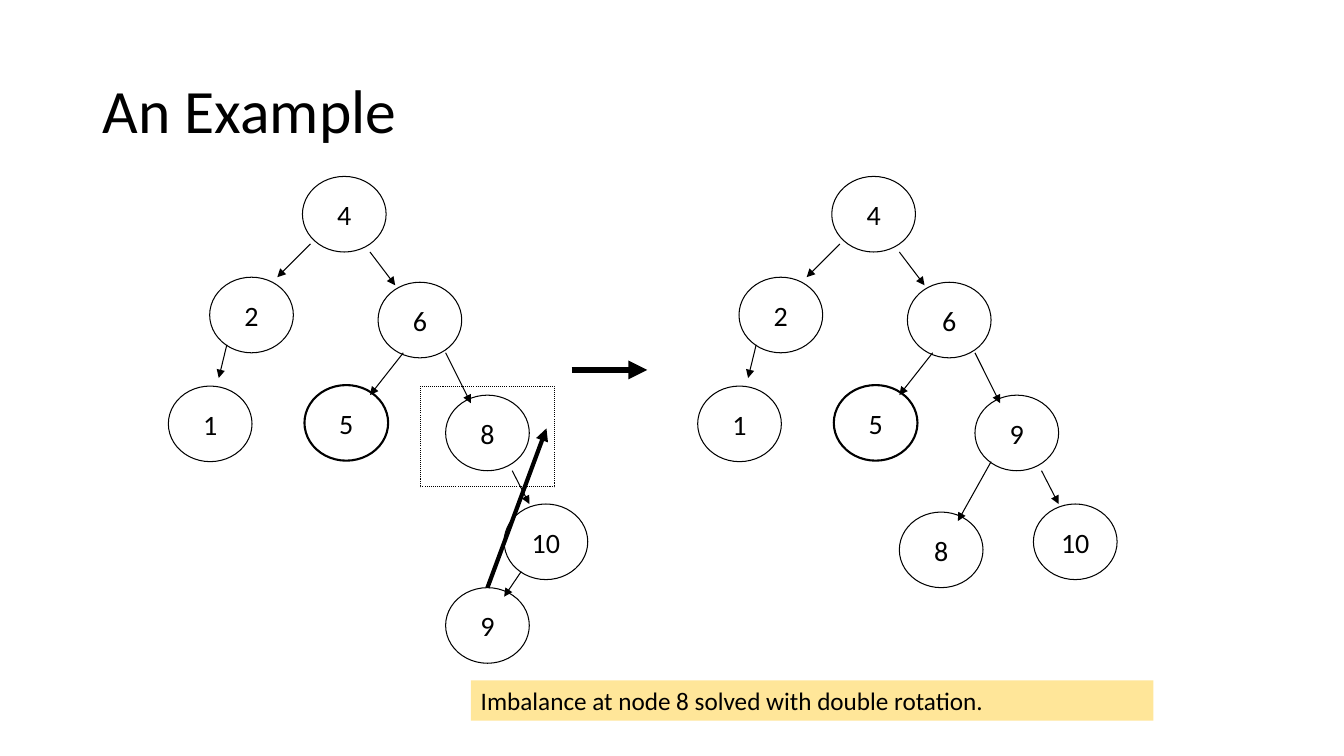
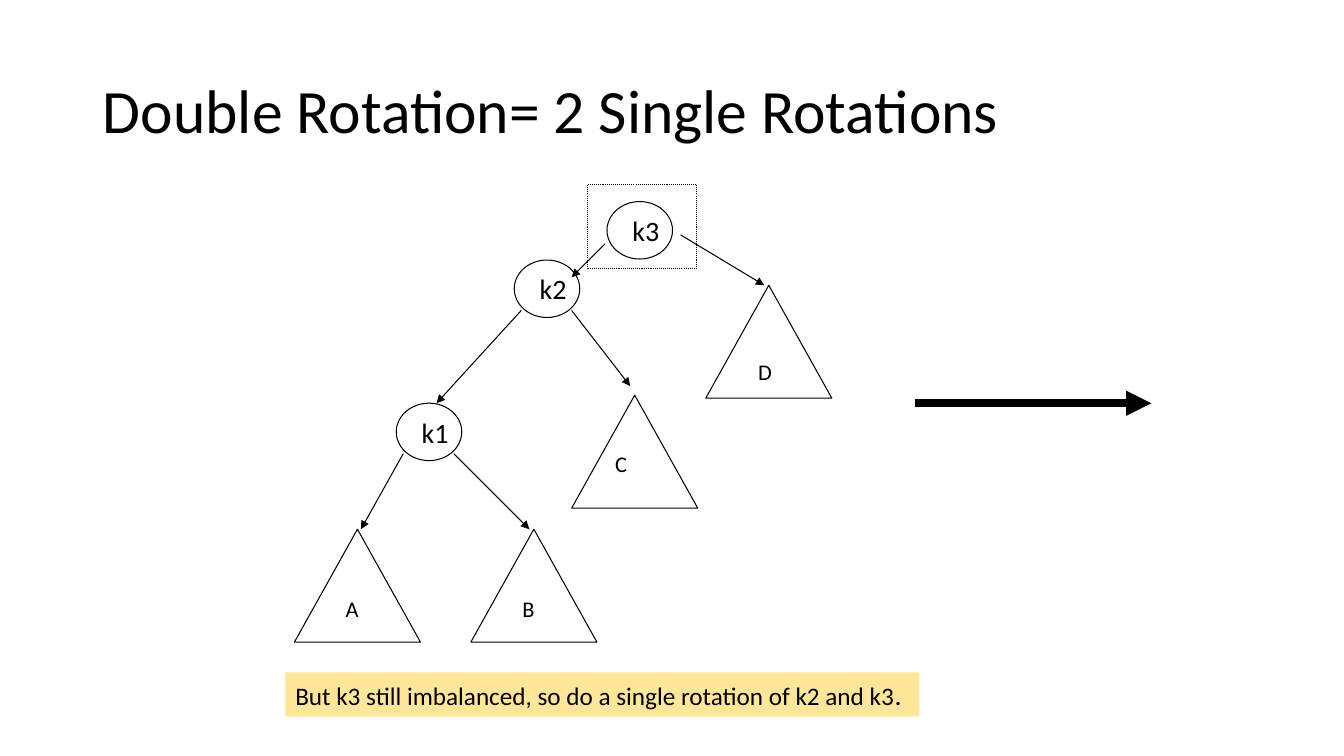
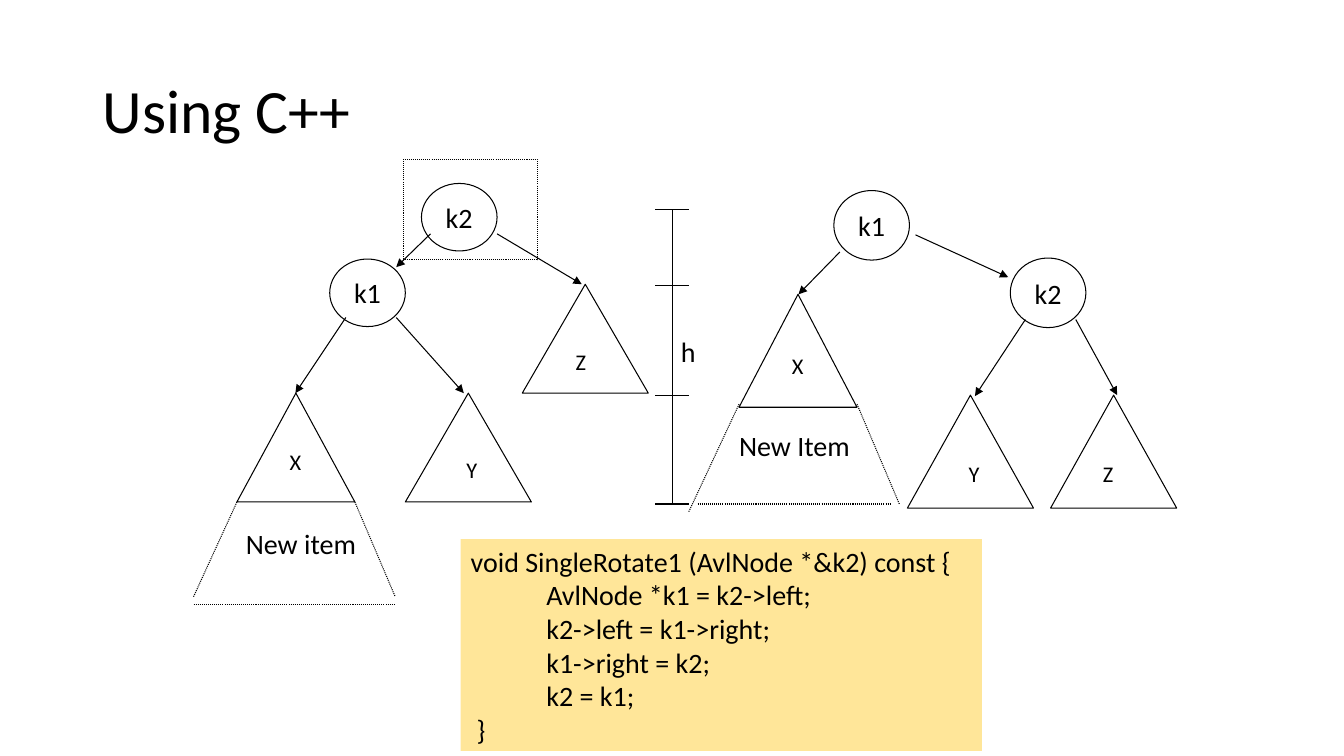
from lxml.etree import SubElement
from pptx import Presentation
from pptx.dml.color import RGBColor
from pptx.enum.dml import MSO_LINE as Dash
from pptx.enum.shapes import MSO_CONNECTOR as Connector, MSO_SHAPE as Shape
from pptx.enum.text import MSO_ANCHOR as Anchor, PP_ALIGN as Align
from pptx.oxml.ns import qn
from pptx.util import Inches, Pt

COLORS = {"ink": "000000", "note": "FFE699"}
FONT = "Calibri"


def color(name):
    return RGBColor.from_string(COLORS[name])


class Deck:
    """Shared style and the slide being drawn."""

    def __init__(self):
        self.prs = Presentation()
        self.prs.slide_width = Inches(13.33)
        self.prs.slide_height = Inches(7.5)
        self.shapes = None

    def slide(self, heading):
        layout = self.prs.slide_layouts[5]
        self.shapes = self.prs.slides.add_slide(layout).shapes
        title = self.shapes.title
        title.left, title.top = Inches(0.92), Inches(0.4)
        title.width, title.height = Inches(11.5), Inches(1.45)
        title.text_frame.vertical_anchor = Anchor.MIDDLE
        self.set_text(title.text_frame, [heading], 44, Align.LEFT)
        title.text_frame.paragraphs[0].line_spacing = 0.9

    def set_text(self, frame, lines, size, align):
        frame.text = "\n".join(lines)
        for paragraph in frame.paragraphs:
            paragraph.alignment = align
            paragraph.font.name = FONT
            paragraph.font.size = Pt(size)
            paragraph.font.color.rgb = color("ink")

    def outline(self, kind, x, y, w, h, weight=0.75, dash=None):
        shape = self.shapes.add_shape(kind, Inches(x), Inches(y), Inches(w), Inches(h))
        shape.shadow.inherit = False
        shape.fill.background()
        shape.line.color.rgb = color("ink")
        shape.line.width = Pt(weight)
        if dash:
            shape.line.dash_style = dash
        return shape

    def node(self, key, x, y, w, h, weight=0.75, shift=0):
        """Tree node; shift pushes the key to the right."""
        circle = self.outline(Shape.OVAL, x, y, w, h, weight)
        frame = circle.text_frame
        frame.margin_left = Inches(2 * shift)
        frame.margin_right = frame.margin_top = frame.margin_bottom = 0
        frame.vertical_anchor = Anchor.MIDDLE
        self.set_text(frame, [key], 20, Align.CENTER)
        return circle

    def focus(self, x, y, w, h):
        self.outline(Shape.RECTANGLE, x, y, w, h, dash=Dash.ROUND_DOT)

    def label(self, text, x, y, w=0.32, h=0.37, size=16):
        box = self.shapes.add_textbox(Inches(x), Inches(y), Inches(w), Inches(h))
        box.text_frame.word_wrap = False
        self.set_text(box.text_frame, [text], size, Align.CENTER)

    def subtree(self, name, x, y, w, h, name_x, name_y):
        self.outline(Shape.FLOWCHART_EXTRACT, x, y, w, h)
        self.label(name, name_x, name_y)

    def line(self, x1, y1, x2, y2, weight=0.75, dash=None, arrow=False):
        link = self.shapes.add_connector(
            Connector.STRAIGHT, Inches(x1), Inches(y1), Inches(x2), Inches(y2))
        link.line.color.rgb = color("ink")
        link.line.width = Pt(weight)
        if dash:
            link.line.dash_style = dash
        properties = link.element.spPr
        if arrow:
            SubElement(properties.find(qn("a:ln")), qn("a:tailEnd"), type="triangle")
        SubElement(properties, qn("a:effectLst"))
        return link

    def arrow(self, x1, y1, x2, y2, weight=0.75):
        return self.line(x1, y1, x2, y2, weight, arrow=True)

    def note(self, lines, x, y, w, h, size=18):
        box = self.outline(Shape.RECTANGLE, x, y, w, h)
        box.fill.solid()
        box.fill.fore_color.rgb = color("note")
        box.line.fill.background()
        box.text_frame.vertical_anchor = Anchor.TOP
        self.set_text(box.text_frame, lines, size, Align.LEFT)
        return box.text_frame.paragraphs


def example(deck):
    deck.slide("An Example")
    size = (0.83, 0.75)

    # The part both trees share, before and after the rotation
    for dx, right_key in ((0, "8"), (5.25, "9")):
        for key, x, y, weight in (
                ("4", 3, 1.75, 0.75), ("2", 2.08, 2.75, 0.75),
                ("6", 3.75, 2.8, 0.75), ("1", 1.67, 3.83, 0.75),
                ("5", 3.02, 3.82, 1.5), (right_key, 4.42, 3.92, 0.75),
                ("10", 5, 5, 0.75)):
            deck.node(key, x + dx, y, *size, weight)
        for x1, y1, x2, y2 in (
                (3.08, 2.42, 2.75, 2.75), (3.67, 2.5, 3.92, 2.83),
                (2.25, 3.42, 2.17, 3.75), (4, 3.5, 3.67, 3.92),
                (4.42, 3.5, 4.67, 4), (5.08, 4.67, 5.25, 5)):
            deck.arrow(x1 + dx, y1, x2 + dx, y2)

    # Before: 9 moves up to the place of 8
    deck.focus(4.17, 3.83, 1.33, 1)
    moving = deck.node("9", 4.42, 5.83, *size)
    deck.arrow(5.17, 5.67, 5, 5.92)
    deck.arrow(4.83, 5.83, 5.42, 4.25, 3).begin_connect(moving, 0)
    deck.arrow(5.67, 3.67, 6.42, 3.67, 4.5)

    # After: 8 hangs below 9
    deck.node("8", 8.92, 5.08, *size)
    deck.arrow(9.83, 4.58, 9.5, 5.17)
    deck.note(["Imbalance at node 8 solved with double rotation."],
              4.67, 6.75, 6.77, 0.4)


def double_rotation(deck):
    deck.slide("Double Rotation= 2 Single Rotations")

    # Tree
    deck.focus(5.83, 1.83, 1.08, 0.83)
    for key, x, y in (("k3", 6.02, 2), ("k2", 5.1, 2.58), ("k1", 3.93, 4)):
        deck.node(key, x, y, 0.65, 0.57, shift=0.06)
    for name, x, y, name_x, name_y in (
            ("A", 2.92, 5.25, 3.33, 5.86), ("B", 4.67, 5.25, 5.08, 5.86),
            ("C", 5.67, 3.92, 6, 4.42), ("D", 7, 2.83, 7.42, 3.5)):
        deck.subtree(name, x, y, 1.25, 1.12, name_x, name_y)
    for ends in ((6.75, 2.33, 7.58, 2.83), (6, 2.42, 5.67, 2.75),
                 (5.17, 3.08, 4.33, 4), (5.67, 3.08, 6.25, 3.83),
                 (4, 4.5, 3.58, 5.25), (4.5, 4.5, 5.25, 5.25)):
        deck.arrow(*ends)

    # Next step
    deck.arrow(9.08, 4, 11.42, 4, 6)
    remark = deck.note(
        ["But k3 still imbalanced, so do a single rotation of k2 and k3"],
        2.83, 6.67, 6.29, 0.44)[0]
    full_stop = remark.add_run()
    full_stop.text = "."
    full_stop.font.size = Pt(20)


def using_cpp(deck):
    deck.slide("Using C++")

    # Nodes and subtrees, before and after the rotation
    deck.focus(4, 1.58, 1.33, 1)
    for key, x, y, h in (("k2", 4.18, 1.82, 0.67), ("k1", 3.27, 2.57, 0.67),
                         ("k1", 8.27, 1.89, 0.69), ("k2", 10.02, 2.56, 0.69)):
        deck.node(key, x, y, 0.75, h)
    for name, x, y, w, h, name_x, name_y in (
            ("X", 2.35, 3.9, 1.17, 1.08, 2.77, 4.4),
            ("Y", 4.02, 3.9, 1.25, 1.08, 4.52, 4.48),
            ("Z", 5.18, 2.82, 1.25, 1.08, 5.6, 3.4),
            ("X", 7.33, 2.92, 1.17, 1.12, 7.75, 3.44),
            ("Y", 9, 3.92, 1.25, 1.12, 9.5, 4.52),
            ("Z", 10.42, 3.92, 1.25, 1.12, 10.83, 4.52)):
        deck.subtree(name, x, y, w, h, name_x, name_y)
    for ends in ((4.27, 2.32, 3.93, 2.65), (4.93, 2.32, 5.77, 2.82),
                 (3.43, 3.15, 2.93, 3.9), (3.93, 3.15, 4.6, 3.9),
                 (8.33, 2.5, 7.92, 2.92), (9.08, 2.33, 10, 2.75),
                 (10.17, 3.17, 9.67, 3.93), (10.67, 3.17, 11.08, 3.92)):
        deck.arrow(*ends)

    # Growth of X by the new item
    for ends in ((2.35, 4.98, 1.92, 5.92), (3.52, 4.98, 3.92, 5.92),
                 (1.92, 6, 3.92, 6), (7.33, 4.01, 6.83, 5.08),
                 (8.5, 4.01, 8.92, 5), (6.92, 5, 8.83, 5)):
        deck.line(*ends, dash=Dash.ROUND_DOT)
    deck.label("New item", 2.33, 5.17, 1.31, 0.44, 20)
    deck.label("New Item", 7.23, 4.2, 1.3, 0.44, 20)

    # Height scale
    deck.line(6.67, 2.08, 6.67, 5)
    for level in (2.08, 2.83, 3.92, 5):
        deck.line(6.5, level, 6.83, level)
    deck.label("h", 6.65, 3.27, 0.35, 0.44, 20)

    # Code
    code = deck.note(
        ["void SingleRotate1 (AvlNode *&k2) const {", "AvlNode *k1 = k2->left;",
         "k2->left = k1->right;", "k1->right = k2;", "k2 = k1;", "}"],
        4.57, 5.35, 5.17, 2.1, 20)
    for statement, indent in zip(code, (0, 0.75, 0.75, 0.75, 0.75, 0.06)):
        statement._p.get_or_add_pPr().set("marL", str(Inches(indent)))


def main():
    deck = Deck()
    example(deck)
    double_rotation(deck)
    using_cpp(deck)
    deck.prs.save("out.pptx")


if __name__ == "__main__":
    main()
